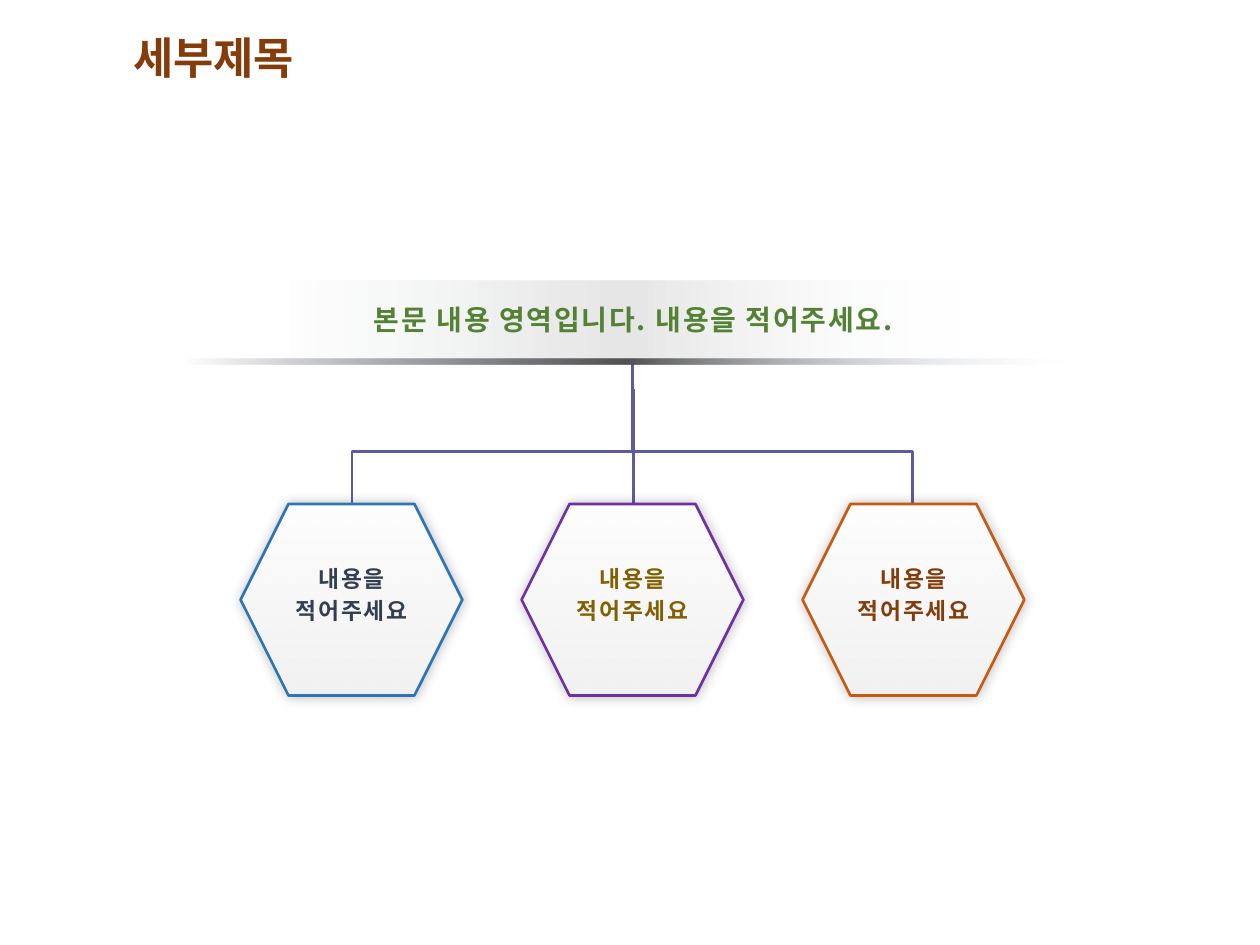
"""Build a slide with a heading band that branches into three hexagons."""
import pptx
import pptx.util
import pptx.dml.color
import pptx.enum.shapes
import pptx.enum.text
import pptx.oxml
import pptx.oxml.ns

Inches, Pt = pptx.util.Inches, pptx.util.Pt
RGB = pptx.dml.color.RGBColor.from_string
SHAPE = pptx.enum.shapes.MSO_SHAPE
LINK = pptx.enum.shapes.MSO_CONNECTOR
ALIGN = pptx.enum.text.PP_ALIGN
ANCHOR = pptx.enum.text.MSO_ANCHOR
NS = pptx.oxml.ns.nsdecls("a")
qn = pptx.oxml.ns.qn

THEME = {
    "title": "843C0B", "band": "548235", "link": "5E5D99",
    "title_size": 25, "band_size": 16, "label_size": 13,
    "latin": "Calibri", "korean": "Noto Sans CJK KR",
    "glow": [(0, "333F50", 0), (50, "000000", 10), (100, "E1EBFB", 0)],
    "bar": [(0, "333F50", 0), (50, "525252", 100), (100, "E1EBFB", 0)],
    "hex": [(0, "FFFFFF", 100), (100, "F2F2F2", 100), (100, "E1EBFB", 0)],
}


def add_block(kind, box, stops, angle):
    block = slide.shapes.add_shape(kind, *map(Inches, box))
    block.shadow.inherit = False
    block.line.fill.background()
    block.fill.gradient()
    marks = "".join(
        f'<a:gs pos="{pos * 1000}"><a:srgbClr val="{color}">'
        f'<a:alpha val="{alpha * 1000}"/></a:srgbClr></a:gs>'
        for pos, color, alpha in stops)
    grad = pptx.oxml.parse_xml(
        f'<a:gradFill {NS} rotWithShape="1"><a:gsLst>{marks}</a:gsLst>'
        f'<a:lin ang="{angle * 60000}" scaled="0"/></a:gradFill>')
    props = block._element.spPr
    props.replace(props.find(qn("a:gradFill")), grad)
    return block


def add_text(box, lines, size, color, face, align, gap=None, space=0):
    frame = slide.shapes.add_textbox(*map(Inches, box)).text_frame
    frame.word_wrap = True
    frame.text = "\n".join(lines)
    for para in frame.paragraphs:
        para.alignment = align
        para.line_spacing = gap
        font = para.font
        font.size, font.bold, font.name = Pt(size), True, face
        font.color.rgb = RGB(color)
        for run in para.runs:
            props = run._r.get_or_add_rPr()
            props.set("spc", str(space))
            east = pptx.oxml.parse_xml(f'<a:ea {NS} typeface="{face}"/>')
            props.append(east)
    return frame


deck = pptx.Presentation()
deck.slide_width, deck.slide_height = Inches(10), Inches(7.5)
slide = deck.slides.add_slide(deck.slide_layouts[6])

title = add_text((0.96, 0.19, 8.62, 0.57), ["세부제목"], THEME["title_size"],
                 THEME["title"], THEME["latin"], ALIGN.LEFT, 0.9)
title.vertical_anchor = ANCHOR.MIDDLE

links = [
    (LINK.ELBOW, 4.94, 5.18, 7.32, 2.96, 270, 70400),
    (LINK.ELBOW, 5.1, 5.19, 2.72, 2.96, 90, 70700),
    (LINK.STRAIGHT, 5.03, 3.09, 5.03, 4.47, 0, None),
]
for kind, *ends, turn, bend in links:
    link = slide.shapes.add_connector(kind, *map(Inches, ends))
    link.line.color.rgb = RGB(THEME["link"])
    link.line.width = Pt(1.5)
    props = link._element.spPr
    props.append(pptx.oxml.parse_xml(f"<a:effectLst {NS}/>"))
    if bend:
        props.find(qn("a:xfrm")).set("rot", str(turn * 60000))
        guides = props.find(qn("a:prstGeom")).find(qn("a:avLst"))
        guides.append(pptx.oxml.parse_xml(
            f'<a:gd {NS} name="adj1" fmla="val {bend}"/>'))

add_block(SHAPE.RECTANGLE, (2.26, 2.23, 5.42, 0.61), THEME["glow"], 0)

hexes = [("2E75B6", "333F50"), ("7030A0", "806000"), ("C55A11", "843C0B")]
for index, (edge, ink) in enumerate(hexes):
    left = 1.91 + 2.23 * index
    block = add_block(SHAPE.HEXAGON, (left, 4, 1.76, 1.52), THEME["hex"], 90)
    block.line.color.rgb = RGB(edge)
    block.line.width = Pt(1.5)
    block._element.spPr.find(qn("a:effectLst")).append(pptx.oxml.parse_xml(
        f'<a:outerShdw {NS} blurRad="{Pt(7)}" dist="0" dir="0" algn="ctr" '
        'rotWithShape="0"><a:srgbClr val="000000"><a:alpha val="25000"/>'
        '</a:srgbClr></a:outerShdw>'))
    add_text((left + 0.02, 4.4, 1.72, 0.61), ["내용을", "적어주세요"],
             THEME["label_size"], ink, THEME["korean"], ALIGN.CENTER,
             Pt(18), 100)

add_block(SHAPE.RECTANGLE, (1.47, 2.85, 7, 0.04), THEME["bar"], 0)
add_text((1.79, 2.35, 6.47, 0.37), ["본문 내용 영역입니다. 내용을 적어주세요."],
         THEME["band_size"], THEME["band"], THEME["korean"], ALIGN.CENTER,
         space=100)

deck.save("out.pptx")
